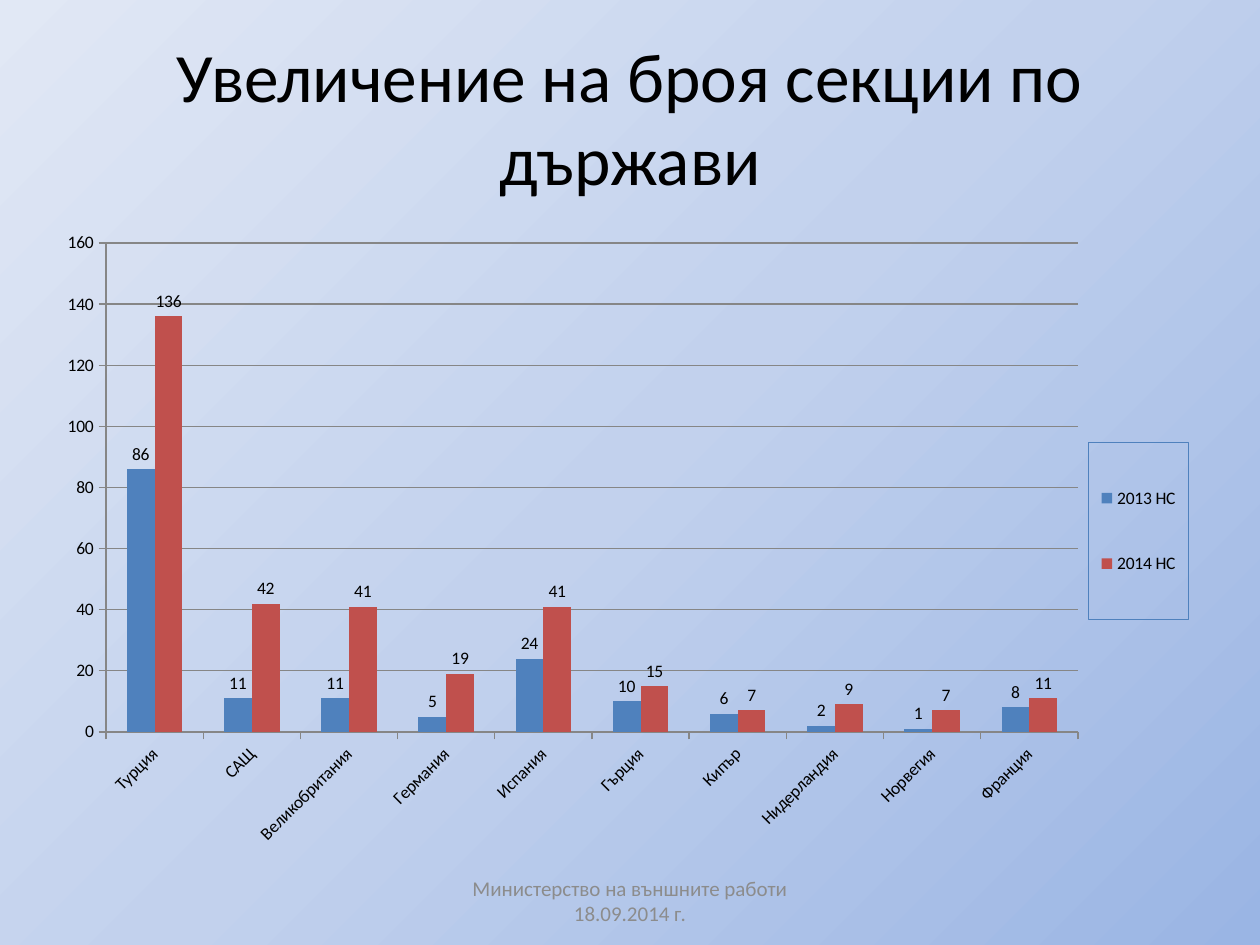
from dataclasses import dataclass

from lxml.etree import SubElement
from pptx import Presentation
from pptx.chart.data import CategoryChartData
from pptx.dml.color import RGBColor
from pptx.enum.chart import (XL_CHART_TYPE, XL_LABEL_POSITION,
                             XL_LEGEND_POSITION, XL_TICK_MARK)
from pptx.enum.text import MSO_ANCHOR, MSO_AUTO_SIZE, PP_ALIGN
from pptx.oxml import parse_xml
from pptx.oxml.ns import nsdecls, qn
from pptx.util import Pt


@dataclass(frozen=True)
class Theme:
    font: str = "Calibri"
    text: str = "000000"
    muted: str = "8C8C8C"
    axis: str = "868686"
    legend_line: str = "4F81BD"
    series: tuple = ("4F81BD", "C0504D")
    background: tuple = ((0, "9AB5E4"), (50, "C2D1ED"), (100, "E1E8F5"))
    title_size: float = 39.6
    footer_size: float = 12
    chart_size: float = 10


THEME = Theme()

CHART_BOX = (25.2, 126, 658.8, 365)
PLOT_BOX = (60.6, 138.9, 555.4, 279.4)
LEGEND_BOX = (622, 252.9, 57.3, 101.1)

COUNTRIES = (" Турция", " САЩ", " Великобритания", " Германия", " Испания",
             " Гърция", " Кипър", " Нидерландия", " Норвегия", " Франция")
SECTIONS = {
    "2013 НС": (86, 11, 11, 5, 24, 10, 6, 2, 1, 8),
    "2014 НС": (136, 42, 41, 19, 41, 15, 7, 9, 7, 11),
}


def rgb(color):
    return RGBColor.from_string(color)


def format_font(font, size, color):
    font.name = THEME.font
    font.size = Pt(size)
    font.color.rgb = rgb(color)


def write_text(sp, text, *, size, color=THEME.text, align=PP_ALIGN.CENTER,
               anchor=MSO_ANCHOR.MIDDLE):
    tf = sp.text_frame
    tf.word_wrap = True
    tf.auto_size = MSO_AUTO_SIZE.NONE
    tf.vertical_anchor = anchor
    p = tf.paragraphs[0]
    p.alignment = align
    r = p.add_run()
    r.text = text
    format_font(r.font, size, color)


def set_background(s):
    """Fill the slide with a gradient that spreads from the bottom right."""
    stops = "".join(
        f'<a:gs pos="{pos * 1000}"><a:srgbClr val="{color}"/></a:gs>'
        for pos, color in THEME.background)
    s.element.cSld.insert(0, parse_xml(
        f'<p:bg {nsdecls("p", "a")}><p:bgPr><a:gradFill rotWithShape="1">'
        f'<a:gsLst>{stops}</a:gsLst><a:path path="circle">'
        '<a:fillToRect l="100000" t="100000"/></a:path></a:gradFill>'
        '<a:effectLst/></p:bgPr></p:bg>'))


def add_title(s, text, left, top, width, height):
    sp = s.shapes.title
    sp.left, sp.top, sp.width, sp.height = map(Pt, (left, top, width, height))
    write_text(sp, text, size=THEME.title_size)


def add_footer(s, text, left, top, width, height):
    sp = s.shapes.add_textbox(*map(Pt, (left, top, width, height)))
    write_text(sp, text, size=THEME.footer_size, color=THEME.muted)


def set_layout(element, box, chart_box, inner=False):
    """Place a chart part at a box given in points on the slide."""
    layout = element.find(qn("c:layout"))
    if layout is None:
        layout = parse_xml(f'<c:layout {nsdecls("c")}/>')
        overlay = element.find(qn("c:overlay"))
        if overlay is None:
            element.insert(0, layout)
        else:
            overlay.addprevious(layout)
    left, top, width, height = chart_box
    x, y, w, h = box
    values = {"xMode": "edge", "yMode": "edge",
              "x": (x - left) / width, "y": (y - top) / height,
              "w": w / width, "h": h / height}
    if inner:
        values = {"layoutTarget": "inner", **values}
    manual = SubElement(layout, qn("c:manualLayout"))
    for tag, value in values.items():
        SubElement(manual, qn(f"c:{tag}")).set("val", str(value))


def format_line(line, color, width=0.75):
    line.color.rgb = rgb(color)
    line.width = Pt(width)


def format_axes(chart):
    for axis in (chart.category_axis, chart.value_axis):
        axis.major_tick_mark = XL_TICK_MARK.OUTSIDE
        format_line(axis.format.line, THEME.axis)
        format_font(axis.tick_labels.font, THEME.chart_size, THEME.text)
    chart.category_axis._element.find(
        f'{qn("c:txPr")}/{qn("a:bodyPr")}').set("rot", str(-45 * 60000))
    values = chart.value_axis
    values.minimum_scale, values.maximum_scale, values.major_unit = 0, 160, 20
    values.has_major_gridlines = True
    format_line(values.major_gridlines.format.line, THEME.axis)


def format_series(plot):
    plot.gap_width = 150
    plot.overlap = 0
    plot.vary_by_categories = False
    for series, color in zip(plot.series, THEME.series):
        series.format.fill.solid()
        series.format.fill.fore_color.rgb = rgb(color)
        labels = series.data_labels
        labels.show_value = True
        labels.position = XL_LABEL_POSITION.OUTSIDE_END
        format_font(labels.font, THEME.chart_size, THEME.text)


def format_legend(chart):
    chart.has_legend = True
    legend = chart.legend
    legend.position = XL_LEGEND_POSITION.RIGHT
    legend.include_in_layout = False
    format_font(legend.font, THEME.chart_size, THEME.text)
    set_layout(legend._element, LEGEND_BOX, CHART_BOX)
    legend._element.find(qn("c:txPr")).addprevious(parse_xml(
        f'<c:spPr {nsdecls("c", "a")}><a:noFill/><a:ln w="9525"><a:solidFill>'
        f'<a:srgbClr val="{THEME.legend_line}"/></a:solidFill></a:ln></c:spPr>'))


def add_column_chart(s, categories, data, left, top, width, height):
    chart_data = CategoryChartData()
    chart_data.categories = categories
    for name, values in data.items():
        chart_data.add_series(name, values)
    chart = s.shapes.add_chart(
        XL_CHART_TYPE.COLUMN_CLUSTERED,
        *map(Pt, (left, top, width, height)), chart_data).chart
    chart.has_title = False
    format_font(chart.font, THEME.chart_size, THEME.text)
    format_axes(chart)
    format_series(chart.plots[0])
    format_legend(chart)
    set_layout(chart._chartSpace.chart.plotArea, PLOT_BOX, CHART_BOX,
               inner=True)


def main():
    prs = Presentation()
    prs.slide_width, prs.slide_height = Pt(720), Pt(540)
    s = prs.slides.add_slide(prs.slide_layouts[5])
    set_background(s)
    add_title(s, "Увеличение на броя секции по държави", 36, 21.6, 648, 90)
    add_footer(s, "Министерство на външните работи 18.09.2014 г.",
               246, 500.4, 228, 28.8)
    add_column_chart(s, COUNTRIES, SECTIONS, *CHART_BOX)
    prs.save("out.pptx")


if __name__ == "__main__":
    main()
